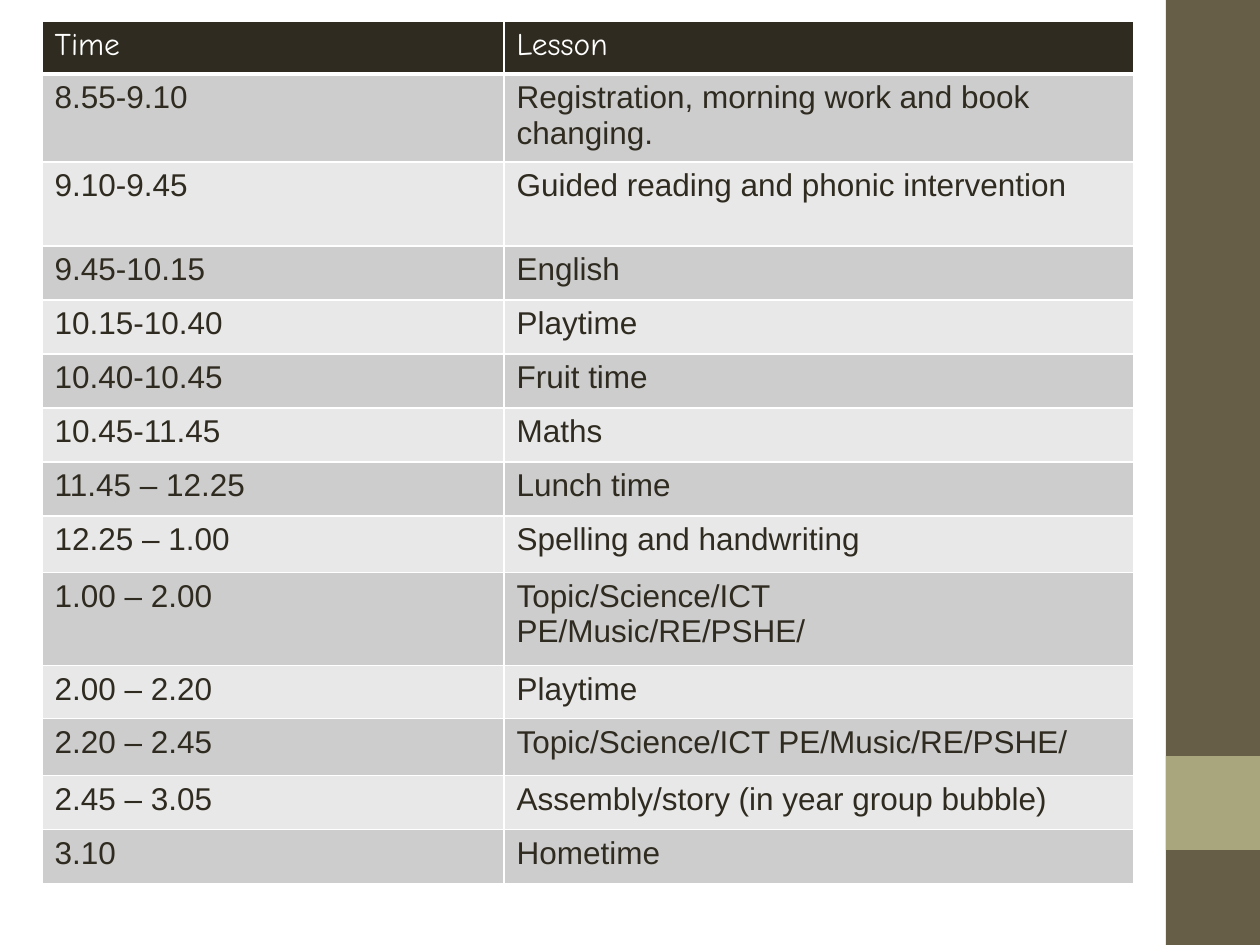
from dataclasses import dataclass

from lxml import etree
from pptx import Presentation
from pptx import util as u
from pptx.dml.color import RGBColor
from pptx.enum import shapes
from pptx.oxml import ns

DPI = 126


def emu(px):
    """Turn px into EMU."""
    return u.Inches(px / DPI)


@dataclass(frozen=True)
class Theme:
    """Colours, fonts and sizes of the timetable."""
    dark: str = "2F2B20"
    white: str = "FFFFFF"
    olive: str = "675E47"
    sage: str = "A9A57C"
    bands: tuple = ("CDCDCD", "E8E8E8")
    head: str = "Comic Neue"
    body: str = "Arial"
    size: int = 18
    thin: int = 1
    thick: int = 3


class Deck:
    """Holds the theme and the current slide."""

    def __init__(self, theme):
        """Open a deck with one blank slide."""
        self.theme = theme
        self.prs = Presentation()
        self.prs.slide_width, self.prs.slide_height = emu(1260), emu(945)
        self.slide = self.prs.slides.add_slide(self.prs.slide_layouts[6])

    def block(self, x, y, w, h, color):
        """Draw a plain filled rectangle."""
        box = self.slide.shapes.add_shape(
            shapes.MSO_SHAPE.RECTANGLE, emu(x), emu(y), emu(w), emu(h))
        box.shadow.inherit = False
        box.fill.solid()
        box.fill.fore_color.rgb = RGBColor.from_string(color)
        box.line.fill.background()

    def edge(self, cell, side, width):
        """Add one white border to a cell, before its fill."""
        props = cell._tc.get_or_add_tcPr()
        line = etree.SubElement(props, ns.qn(f"a:ln{side}"), w=str(u.Pt(width)))
        fill = etree.SubElement(line, ns.qn("a:solidFill"))
        etree.SubElement(fill, ns.qn("a:srgbClr"), val=self.theme.white)

    def cell(self, cell, words, fill, font, color, base):
        """Write and style one table cell."""
        for side in "LRTB":
            self.edge(cell, side, base if side == "B" else self.theme.thin)
        cell.fill.solid()
        cell.fill.fore_color.rgb = RGBColor.from_string(fill)
        cell.text_frame.text = words
        for para in cell.text_frame.paragraphs:
            for run in para.runs:
                run.font.name, run.font.size = font, u.Pt(self.theme.size)
                run.font.bold = False
                run.font.color.rgb = RGBColor.from_string(color)

    def table(self, x, y, cols, rows):
        """Draw a banded table from (height, words...) rows."""
        t = self.theme
        high = sum(row[0] for row in rows)
        grid = self.slide.shapes.add_table(
            len(rows), len(cols), emu(x), emu(y), emu(sum(cols)), emu(high)).table
        for col, width in zip(grid.columns, cols):
            col.width = emu(width)
        for i, (height, *words) in enumerate(rows):
            grid.rows[i].height = emu(height)
            look = ((t.bands[(i - 1) % 2], t.body, t.dark, t.thin) if i
                    else (t.dark, t.head, t.white, t.thick))
            for j, word in enumerate(words):
                self.cell(grid.cell(i, j), word, *look)


LESSONS = [
    (53, "Time", "Lesson"),
    (88, "8.55-9.10", "Registration, morning work and book changing."),
    (84, "9.10-9.45", "Guided reading and phonic intervention"),
    (54, "9.45-10.15", "English"),
    (54, "10.15-10.40", "Playtime"),
    (54, "10.40-10.45", "Fruit time"),
    (54, "10.45-11.45", "Maths"),
    (54, "11.45 – 12.25", "Lunch time"),
    (57, "12.25 – 1.00", "Spelling and handwriting"),
    (93, "1.00 – 2.00", "Topic/Science/ICT\nPE/Music/RE/PSHE/"),
    (53, "2.00 – 2.20", "Playtime"),
    (57, "2.20 – 2.45", "Topic/Science/ICT PE/Music/RE/PSHE/"),
    (54, "2.45 – 3.05", "Assembly/story (in year group bubble)"),
    (54, "3.10", "Hometime"),
]


def main():
    """Build the timetable slide."""
    deck = Deck(Theme())
    deck.block(1166, 0, 94, 945, deck.theme.olive)
    deck.block(1166, 756, 94, 94, deck.theme.sage)
    deck.table(42, 21, (462, 630), LESSONS)
    deck.prs.save("out.pptx")


if __name__ == "__main__":
    main()
